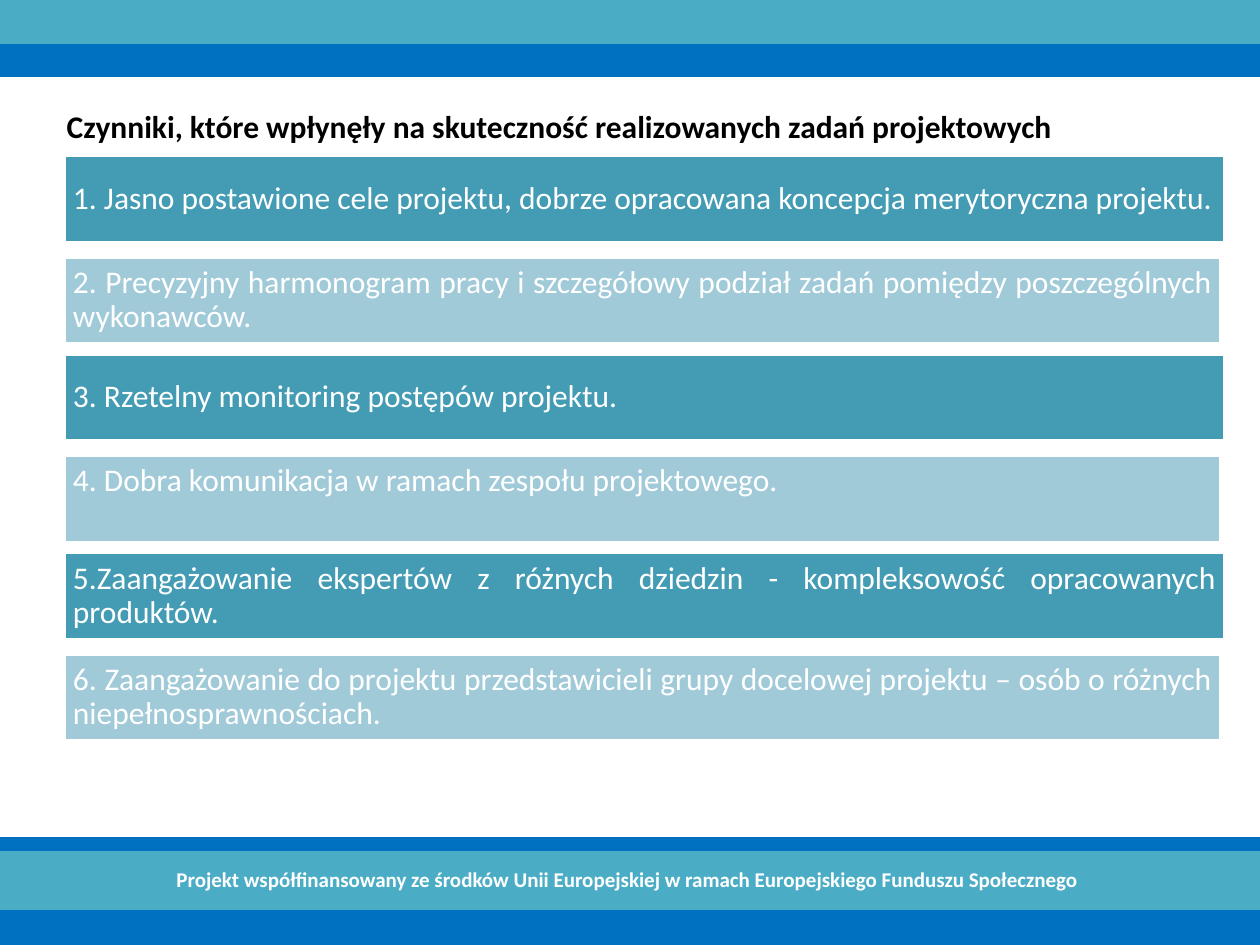
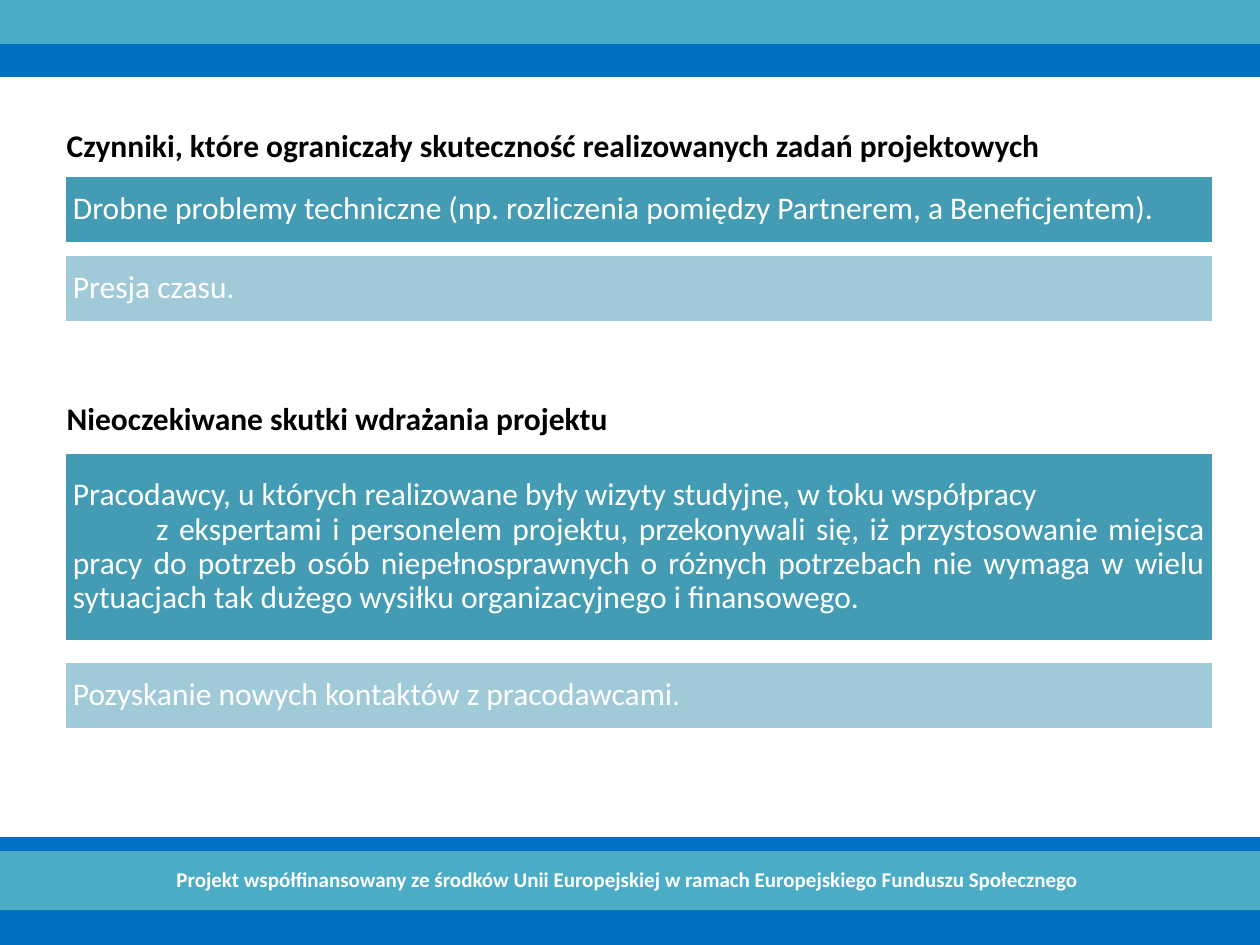
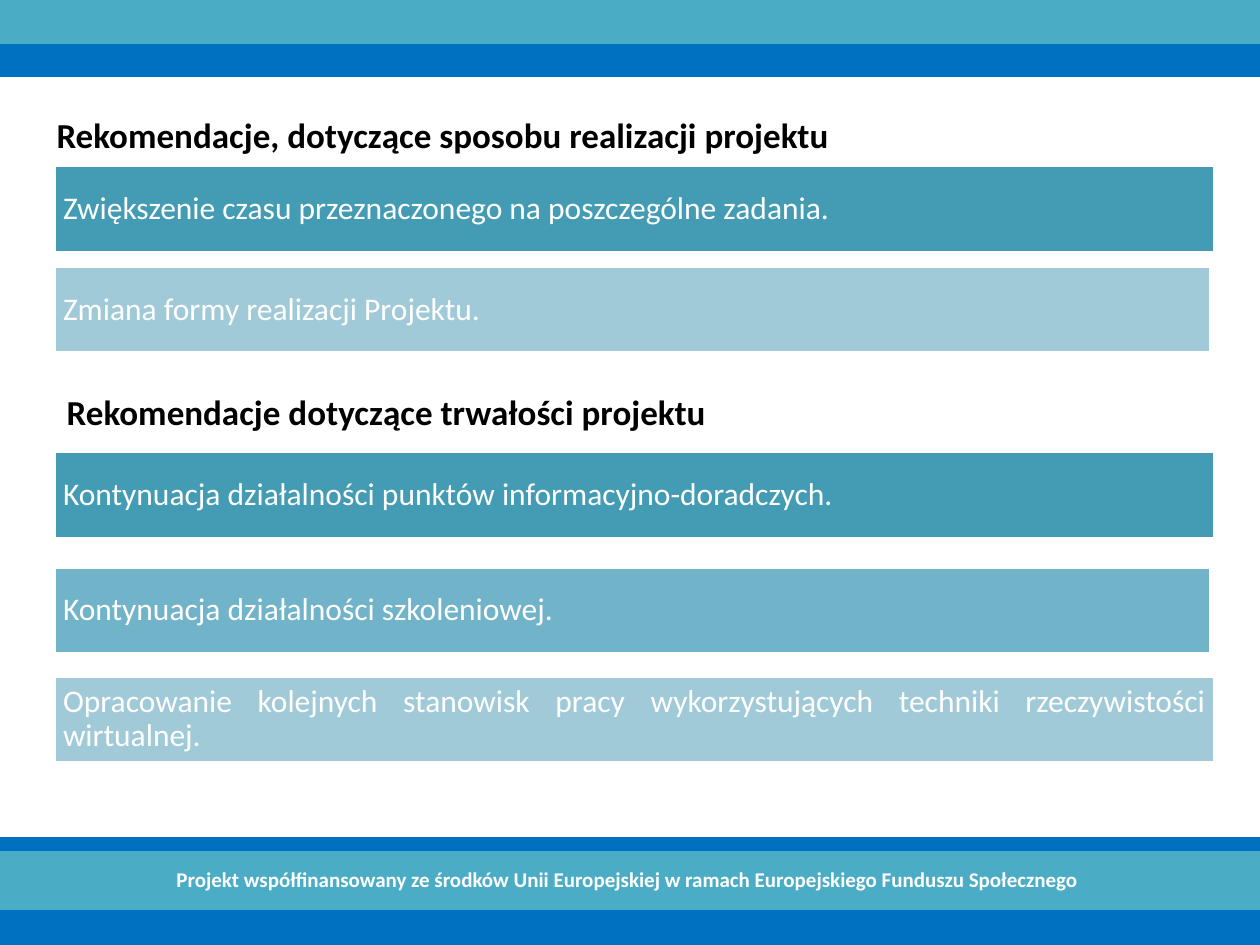
import pptx
import pptx.dml.color
import pptx.enum.shapes
import pptx.enum.text
import pptx.util

Pt = pptx.util.Pt
RGBColor = pptx.dml.color.RGBColor
RECTANGLE = pptx.enum.shapes.MSO_SHAPE.RECTANGLE
ALIGN = pptx.enum.text.PP_ALIGN
ANCHOR = pptx.enum.text.MSO_ANCHOR

TEAL = RGBColor(0x4B, 0xAC, 0xC6)
BLUE = RGBColor(0x00, 0x70, 0xC0)
DARK = RGBColor(0x44, 0x9C, 0xB4)
MEDIUM = RGBColor(0x71, 0xB3, 0xC8)
LIGHT = RGBColor(0xA1, 0xCA, 0xD9)
WHITE = RGBColor(0xFF, 0xFF, 0xFF)
BLACK = RGBColor(0x00, 0x00, 0x00)

FONT = "Calibri"
WIDTH, HEIGHT = 720, 540
FOOTER = ("Projekt współfinansowany ze środków Unii Europejskiej "
          "w ramach Europejskiego Funduszu Społecznego ")
WIDE, NARROW = 663.1, 661
BAR_H = 49.7
HEADING_H = 34


def add_run(p, text, size, color, bold=False):
    r = p.add_run()
    r.text = text
    r.font.name = FONT
    r.font.size = Pt(size)
    r.font.bold = bold
    r.font.color.rgb = color


def add_rect(slide, box, fill, line):
    sp = slide.shapes.add_shape(RECTANGLE, *map(Pt, box))
    sp.shadow.inherit = False
    sp.fill.solid()
    sp.fill.fore_color.rgb = fill
    sp.line.color.rgb = line
    sp.line.width = Pt(2)
    return sp


def add_frame(slide):
    """Draw the header and footer bands, with the funding note."""
    add_rect(slide, (0, 0, WIDTH, 25.9), TEAL, TEAL)
    add_rect(slide, (0, 25.9, WIDTH, 17.3), BLUE, BLUE)
    add_rect(slide, (0, HEIGHT - 25.9, WIDTH, 25.9), BLUE, BLUE)
    note = add_rect(slide, (0, 485.3, WIDTH, 33.8), TEAL, TEAL)
    add_rect(slide, (0, 479.5, WIDTH, 5.8), BLUE, BLUE)
    tf = note.text_frame
    tf.vertical_anchor = ANCHOR.MIDDLE
    p = tf.paragraphs[0]
    p.alignment = ALIGN.CENTER
    add_run(p, FOOTER, 12, WHITE, bold=True)


def add_heading(slide, left, middle, text, size=18):
    """Place a bold heading whose line is centred on the height middle."""
    box = (left, middle - HEADING_H / 2, WIDE, HEADING_H)
    tf = slide.shapes.add_textbox(*map(Pt, box)).text_frame
    tf.word_wrap = True
    tf.vertical_anchor = ANCHOR.MIDDLE
    add_run(tf.paragraphs[0], text, size, BLACK, bold=True)


def add_bar(slide, box, fill, text, anchor=ANCHOR.MIDDLE):
    sp = add_rect(slide, box, fill, WHITE)
    tf = sp.text_frame
    tf.word_wrap = True
    tf.vertical_anchor = anchor
    tf.margin_left = tf.margin_right = Pt(5)
    tf.margin_top = tf.margin_bottom = Pt(5)
    p = tf.paragraphs[0]
    p.alignment = ALIGN.JUSTIFY
    p.line_spacing = 0.9
    add_run(p, text, 18, WHITE)
    return tf


def add_success_factors(slide):
    add_heading(slide, 31, 72, "Czynniki, które wpłynęły na skuteczność "
                "realizowanych zadań projektowych")
    factors = [
        "1. Jasno postawione cele projektu, dobrze opracowana koncepcja merytoryczna projektu.",
        "2. Precyzyjny harmonogram pracy i szczegółowy podział zadań pomiędzy "
        "poszczególnych wykonawców.",
        "3. Rzetelny monitoring postępów projektu.",
        "4. Dobra komunikacja w ramach zespołu projektowego.",
        "5.Zaangażowanie ekspertów z różnych dziedzin - kompleksowość opracowanych produktów.",
        "6. Zaangażowanie do projektu przedstawicieli grupy docelowej projektu – "
        "osób o różnych niepełnosprawnościach.",
    ]
    for i, text in enumerate(factors):
        pair, second = divmod(i, 2)
        top = 88.9 + 113.4 * pair + 58 * second
        anchor = ANCHOR.TOP if i == 3 else ANCHOR.MIDDLE
        add_bar(slide, (36.7, top, NARROW if second else WIDE, BAR_H),
                LIGHT if second else DARK, text, anchor)


def add_limits_and_effects(slide):
    left, width, low = 36.7, 657, 39
    add_heading(slide, 31, 82.9, "Czynniki, które ograniczały skuteczność "
                "realizowanych zadań projektowych")
    add_bar(slide, (left, 100.1, width, low), DARK,
            "Drobne problemy techniczne (np. rozliczenia pomiędzy Partnerem, a Beneficjentem).")
    add_bar(slide, (left, 145.4, width, low), LIGHT, "Presja czasu.")

    add_heading(slide, 31, 238.9, "Nieoczekiwane skutki wdrażania projektu")
    tf = add_bar(slide, (left, 258.5, width, 108), DARK,
                 "Pracodawcy, u których realizowane były wizyty studyjne, w toku współpracy")
    p = tf.add_paragraph()
    p.alignment = ALIGN.JUSTIFY
    p.line_spacing = 0.9
    p._p.get_or_add_pPr().set("indent", str(Pt(47.5)))
    add_run(p, "z ekspertami i personelem projektu, przekonywali się, iż przystosowanie "
            "miejsca pracy do potrzeb osób niepełnosprawnych o różnych potrzebach nie "
            "wymaga w wielu sytuacjach tak dużego wysiłku organizacyjnego i finansowego.",
            18, WHITE)
    add_bar(slide, (left, 378, width, low), LIGHT,
            "Pozyskanie nowych kontaktów z pracodawcami.")


def add_recommendations(slide):
    add_heading(slide, 25.2, 77.1, "Rekomendacje, dotyczące sposobu realizacji projektu", 20)
    add_heading(slide, 31, 235.4, "Rekomendacje dotyczące trwałości projektu", 20)
    bars = [
        (94.5, WIDE, DARK, "Zwiększenie czasu przeznaczonego na poszczególne zadania."),
        (152.2, NARROW, LIGHT, "Zmiana formy realizacji Projektu."),
        (258, WIDE, DARK, "Kontynuacja działalności punktów informacyjno-doradczych."),
        (324, NARROW, MEDIUM, "Kontynuacja działalności szkoleniowej."),
        (386.3, WIDE, LIGHT, "Opracowanie kolejnych stanowisk pracy wykorzystujących "
         "techniki rzeczywistości wirtualnej."),
    ]
    for top, width, fill, text in bars:
        add_bar(slide, (31, top, width, BAR_H), fill, text)


def main():
    prs = pptx.Presentation()
    prs.slide_width, prs.slide_height = Pt(WIDTH), Pt(HEIGHT)
    for add_content in (add_success_factors, add_limits_and_effects, add_recommendations):
        slide = prs.slides.add_slide(prs.slide_layouts[6])
        add_frame(slide)
        add_content(slide)
    prs.save("out.pptx")


if __name__ == "__main__":
    main()
